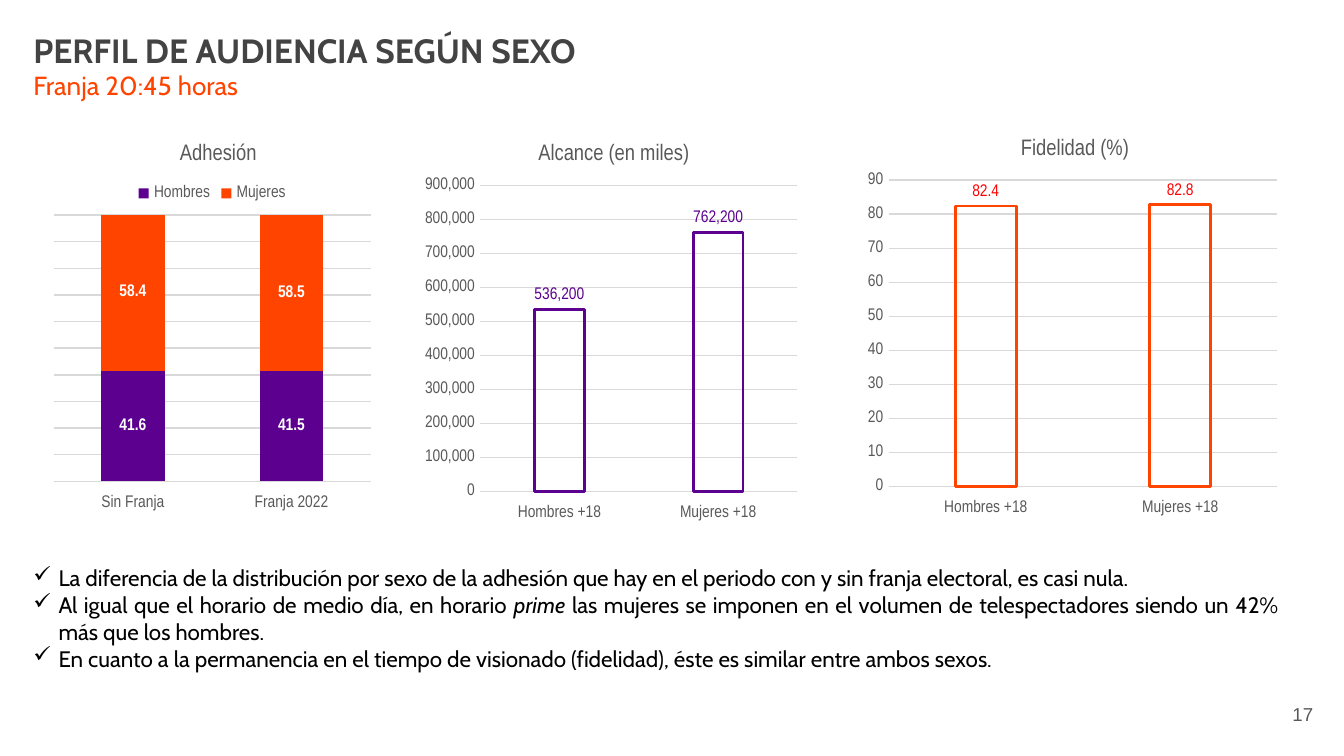
"""Build the slide on audience by sex: three column charts and findings."""
from dataclasses import dataclass
from typing import Optional

from lxml.etree import SubElement
from pptx import Presentation
from pptx.chart.data import CategoryChartData
from pptx.dml.color import RGBColor
from pptx.enum.chart import (XL_CHART_TYPE, XL_LABEL_POSITION,
                             XL_LEGEND_POSITION, XL_TICK_LABEL_POSITION, XL_TICK_MARK)
from pptx.enum.text import MSO_ANCHOR, MSO_AUTO_SIZE, PP_ALIGN
from pptx.oxml.ns import qn
from pptx.util import Pt

PURPLE, ORANGE, RED = "5B008F", "FF4400", "FF0000"
GRAY, PALE, WHITE, BLACK = "595959", "D9D9D9", "FFFFFF", "000000"
TEXT, NARROW = "Cabin", "Arial Narrow"


@dataclass
class Run:
    text: str
    size: float
    color: str
    face: str = TEXT
    bold: bool = False
    slant: bool = False


@dataclass
class Series:
    name: str
    values: tuple
    color: str
    ink: str


@dataclass
class Graph:
    title: str
    box: tuple
    cats: tuple
    series: list
    plot: tuple
    head: tuple
    key: Optional[tuple] = None
    step: float = 0
    top: float = 0
    form: str = "General"


def tint(code: str) -> RGBColor:
    return RGBColor.from_string(code)


def style(font, size: float, color: str, face: str = NARROW,
          bold: bool = False, slant: bool = False) -> None:
    font.size, font.name = Pt(size), face
    font.bold, font.italic = bold, slant
    font.color.rgb = tint(color)


def add_runs(para, runs: list) -> None:
    for item in runs:
        run = para.add_run()
        run.text = item.text
        style(run.font, item.size, item.color, item.face, item.bold, item.slant)


def add_text(slide, box: tuple, lines: list, align=PP_ALIGN.LEFT,
             inset: float = 7.2, bullet: str = "", anchor=MSO_ANCHOR.TOP) -> None:
    frame = slide.shapes.add_textbox(*map(Pt, box)).text_frame
    frame.word_wrap, frame.vertical_anchor = True, anchor
    frame.margin_left = frame.margin_right = Pt(7.2)
    frame.margin_top = frame.margin_bottom = Pt(inset)
    frame.auto_size = MSO_AUTO_SIZE.SHAPE_TO_FIT_TEXT if bullet else MSO_AUTO_SIZE.NONE
    for num, runs in enumerate(lines):
        para = frame.add_paragraph() if num else frame.paragraphs[0]
        para.alignment = align
        if bullet:
            props = para._p.get_or_add_pPr()
            props.set("marL", str(Pt(13.5)))
            props.set("indent", str(-Pt(13.5)))
            SubElement(SubElement(props, qn("a:buClr")), qn("a:srgbClr"), val=BLACK)
            SubElement(props, qn("a:buChar"), char=bullet)
        add_runs(para, runs)


def place(node, spot: int, area: tuple, inner: bool = False) -> None:
    for old in node.findall(qn("c:layout")):
        node.remove(old)
    layout = SubElement(node, qn("c:layout"))
    node.insert(spot, layout)
    manual = SubElement(layout, qn("c:manualLayout"))
    if inner:
        SubElement(manual, qn("c:layoutTarget"), val="inner")
    for tag in ("xMode", "yMode"):
        SubElement(manual, qn(f"c:{tag}"), val="edge")
    for tag, value in zip("xywh", area):
        SubElement(manual, qn(f"c:{tag}"), val=str(value))


def paint(graph: Graph, bar, item: Series) -> None:
    stacked = graph.key is not None
    if stacked:
        bar.format.fill.solid()
        bar.format.fill.fore_color.rgb = tint(item.color)
    else:
        bar.format.fill.background()
        bar.format.line.color.rgb = tint(item.color)
        bar.format.line.width = Pt(1.5)
    bar.invert_if_negative = False
    labels = bar.data_labels
    labels.show_value = True
    labels.number_format, labels.number_format_is_linked = graph.form, False
    labels.position = XL_LABEL_POSITION.CENTER if stacked else XL_LABEL_POSITION.OUTSIDE_END
    style(labels.font, 9, item.ink, bold=stacked)


def add_graph(slide, graph: Graph) -> None:
    data = CategoryChartData(number_format=graph.form)
    data.categories = graph.cats
    for item in graph.series:
        data.add_series(item.name, item.values)
    stacked = graph.key is not None
    kind = XL_CHART_TYPE.COLUMN_STACKED_100 if stacked else XL_CHART_TYPE.COLUMN_CLUSTERED
    chart = slide.shapes.add_chart(kind, *map(Pt, graph.box), data).chart
    style(chart.font, 10, BLACK)
    root = chart._chartSpace.chart
    add_runs(chart.chart_title.text_frame.paragraphs[0],
             [Run(graph.title, 12, GRAY, NARROW)])
    chart.chart_title.include_in_layout = False
    place(root.find(qn("c:title")), 1, graph.head)
    place(root.plotArea, 0, graph.plot, True)
    chart.has_legend = stacked
    if stacked:
        chart.legend.position = XL_LEGEND_POSITION.TOP
        chart.legend.include_in_layout = False
        style(chart.legend.font, 9, GRAY)
        place(root.find(qn("c:legend")), 1, graph.key)

    plot = chart.plots[0]
    plot.vary_by_categories = False
    plot.gap_width, plot.overlap = (150, 100) if stacked else (219, -27)
    for bar, item in zip(plot.series, graph.series):
        paint(graph, bar, item)

    base, scale = chart.category_axis, chart.value_axis
    for axis in (base, scale):
        axis.major_tick_mark = axis.minor_tick_mark = XL_TICK_MARK.NONE
        style(axis.tick_labels.font, 9, GRAY)
    base.tick_label_position = XL_TICK_LABEL_POSITION.LOW
    scale.has_major_gridlines = True
    for line in (base.format.line, scale.major_gridlines.format.line):
        line.color.rgb, line.width = tint(PALE), Pt(0.75)
    scale.format.line.fill.background()
    scale.visible = not stacked
    if graph.step:
        scale.minimum_scale, scale.maximum_scale = 0, graph.top
        scale.major_unit = graph.step
        scale.tick_labels.number_format = graph.form
        scale.tick_labels.number_format_is_linked = False


def note(text: str, slant: bool = False) -> Run:
    return Run(text, 12, BLACK, slant=slant)


SEXES = ("Hombres +18", "Mujeres +18")
GRAPHS = [
    Graph("Adhesión", (25.2, 64.8, 177, 210), ("Sin Franja", "Franja 2022"),
          [Series("Hombres", (41.6, 41.5), PURPLE, WHITE),
           Series("Mujeres", (58.4, 58.5), ORANGE, WHITE)],
          (0.02, 0.24, 0.96, 0.68), (0.39, 0.04), (0.26, 0.15, 0.48, 0.07)),
    Graph("Alcance (en miles)", (224, 64.8, 207.4, 216), SEXES,
          [Series("Series 1", (536200, 762200), PURPLE, PURPLE)],
          (0.16, 0.16, 0.82, 0.76), (0.3, 0.04), step=100000, top=900000, form="#,##0"),
    Graph("Fidelidad (%)", (460, 62, 229, 216), SEXES,
          [Series("Series 1", (82.4, 82.8), ORANGE, RED)],
          (0.07, 0.16, 0.91, 0.76), (0.37, 0.04), step=10, top=90),
]
NOTES = [
    [note("La diferencia de la distribución por sexo de la adhesión que hay en el "
          "periodo con y sin franja electoral, es casi nula.")],
    [note("Al igual que el horario de medio día, en horario "), note("prime", True),
     note(" las mujeres se imponen en el volumen de telespectadores siendo un 42% "
          "más que los hombres.")],
    [note("En cuanto a la permanencia en el tiempo de visionado (fidelidad), "
          "éste es similar entre ambos sexos.")],
]


def main() -> None:
    deck = Presentation()
    deck.slide_width, deck.slide_height = Pt(720), Pt(405)
    slide = deck.slides.add_slide(deck.slide_layouts[6])
    add_text(slide, (667.4, 367.2, 43.2, 31), [[Run("17", 10, GRAY, "Arial")]],
             PP_ALIGN.RIGHT, anchor=MSO_ANCHOR.MIDDLE)
    add_text(slide, (10.8, 8.6, 358.6, 44.6),
             [[Run("PERFIL DE AUDIENCIA SEGÚN SEXO", 18, "434343", bold=True)],
              [Run("Franja 20:45 horas", 14, ORANGE)]])
    add_text(slide, (10.8, 298.8, 681.8, 65.5), NOTES, PP_ALIGN.JUSTIFY, 3.6, "✓")
    for graph in GRAPHS:
        add_graph(slide, graph)
    deck.save("out.pptx")


if __name__ == "__main__":
    main()
